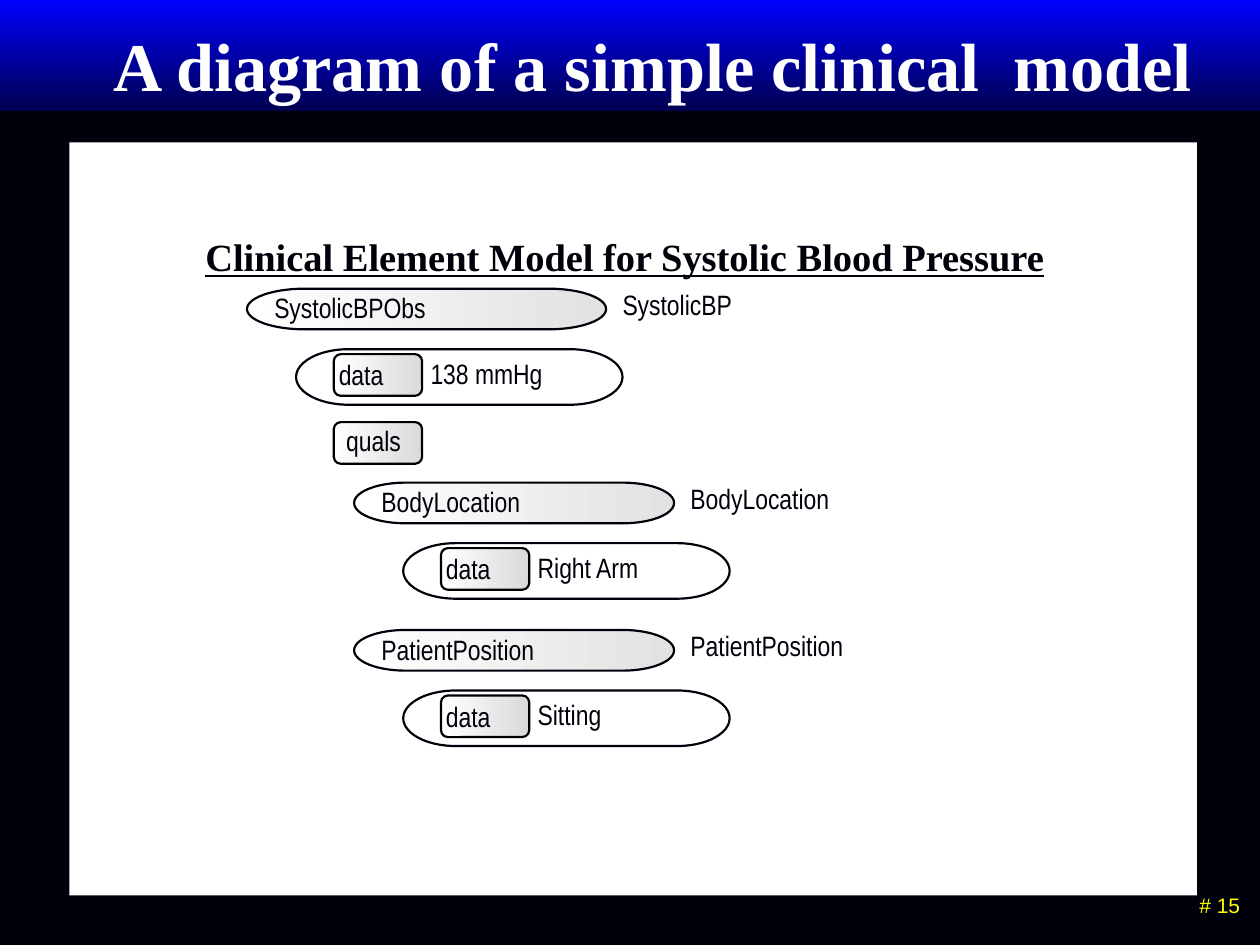
"""Build a slide that diagrams a clinical element model for systolic blood pressure."""
from dataclasses import dataclass

from pptx import Presentation
from pptx.dml.color import RGBColor
from pptx.enum.shapes import MSO_SHAPE
from pptx.enum.text import MSO_ANCHOR, PP_ALIGN
from pptx.util import Cm, Pt

COLORS = {
    "ink": "00000A", "black": "000000", "white": "FFFFFF",
    "header_top": "0000FF", "header_bottom": "00004F",
    "pill_end": "E2E2E2", "badge_end": "DADADA", "page": "FFFF00",
}


@dataclass(frozen=True)
class Box:
    x: float
    y: float
    w: float
    h: float

    def lengths(self) -> tuple:
        return Cm(self.x), Cm(self.y), Cm(self.w), Cm(self.h)


@dataclass(frozen=True)
class Style:
    font: str = "Arial Narrow"
    size: int = 16
    color: str = "ink"
    bold: bool = False
    underline: bool = False
    align: PP_ALIGN = PP_ALIGN.LEFT
    anchor: MSO_ANCHOR = MSO_ANCHOR.TOP


@dataclass(frozen=True)
class Element:
    name: str
    label: str
    value: str
    x: float
    y: float
    w: float


LABEL = Style()
TITLE = Style("Times New Roman", 39, "white", bold=True,
              align=PP_ALIGN.CENTER, anchor=MSO_ANCHOR.MIDDLE)
HEADING = Style("Times New Roman", 22, bold=True, underline=True)
PAGE = Style("Arial", 12, "page", align=PP_ALIGN.RIGHT)

ELEMENTS = [
    Element("SystolicBPObs", "SystolicBP", "138 mmHg", 4.98, 5.82, 7.24),
    Element("BodyLocation", "BodyLocation", "Right Arm", 7.14, 9.73, 6.45),
    Element("PatientPosition", "PatientPosition", "Sitting", 7.14, 12.7, 6.45),
]
TEXT_H = 0.94


def rgb(name: str) -> RGBColor:
    return RGBColor.from_string(COLORS[name])


def add_box(s, kind: MSO_SHAPE, box: Box, fill: str, end: str = "",
            angle: int = 0, line: str = ""):
    """Draw a preset shape, with a gradient if an end colour is given."""
    sp = s.shapes.add_shape(kind, *box.lengths())
    sp.shadow.inherit = False
    if end:
        sp.fill.gradient()
        sp.fill.gradient_angle = angle
        for stop, name in zip(sp.fill.gradient_stops, (fill, end)):
            stop.color.rgb = rgb(name)
    else:
        sp.fill.solid()
        sp.fill.fore_color.rgb = rgb(fill)
    if line:
        sp.line.color.rgb = rgb(line)
        sp.line.width = Pt(1.25)
    else:
        sp.line.fill.background()
    return sp


def add_text(s, text: str, box: Box, style: Style = LABEL) -> None:
    """Write one line of text in a text box."""
    tf = s.shapes.add_textbox(*box.lengths()).text_frame
    tf.word_wrap = True
    tf.vertical_anchor = style.anchor
    p = tf.paragraphs[0]
    p.text = text
    p.alignment = style.align
    p.font.name = style.font
    p.font.size = Pt(style.size)
    p.font.bold = style.bold
    p.font.underline = style.underline
    p.font.color.rgb = rgb(style.color)


def add_badge(s, text: str, x: float, y: float, dx: float, dy: float) -> None:
    """Draw a rounded badge with its text shifted by dx and dy."""
    add_box(s, MSO_SHAPE.ROUNDED_RECTANGLE, Box(x, y, 1.78, 0.84),
            "white", "badge_end", line="black")
    add_text(s, text, Box(x + dx, y + dy, 1.78, TEXT_H))


def add_element(s, e: Element) -> None:
    """Draw a named pill with its label, and the data row below it."""
    pill = MSO_SHAPE.FLOWCHART_TERMINATOR
    add_box(s, pill, Box(e.x + 0.99, e.y + 1.22, 6.58, 1.12), "white", line="ink")
    add_badge(s, "data", e.x + 1.75, e.y + 1.32, -0.15, -0.05)
    add_text(s, e.value, Box(e.x + 3.45, e.y + 1.24, 3.2, TEXT_H))
    add_text(s, e.label, Box(e.x + e.w + 0.08, e.y - 0.15, 4, TEXT_H))
    add_box(s, pill, Box(e.x, e.y, e.w, 0.82), "white", "pill_end", line="ink")
    add_text(s, e.name, Box(e.x + 0.3, e.y - 0.08, 4, TEXT_H))


def main() -> None:
    prs = Presentation()
    prs.slide_width, prs.slide_height = Cm(25.4), Cm(19.05)
    s = prs.slides.add_slide(prs.slide_layouts[6])
    s.background.fill.solid()
    s.background.fill.fore_color.rgb = rgb("ink")

    header = add_box(s, MSO_SHAPE.ROUNDED_RECTANGLE, Box(0, 0, 25.4, 2.24),
                     "header_top", "header_bottom", angle=270)
    header.adjustments[0] = 0
    add_text(s, "# 15", Box(22.61, 17.86, 2.64, 0.86), PAGE)
    add_box(s, MSO_SHAPE.RECTANGLE, Box(1.4, 2.87, 22.73, 15.18), "white")
    add_text(s, "A diagram of a simple clinical  model",
             Box(0.23, 0.18, 25.88, 2.21), TITLE)

    for element in ELEMENTS:
        add_element(s, element)
    add_badge(s, "quals", 6.73, 8.51, 0, -0.1)
    add_text(s, "Clinical Element Model for Systolic Blood Pressure",
             Box(3.89, 4.57, 17.63, 1.19), HEADING)
    prs.save("out.pptx")


if __name__ == "__main__":
    main()
